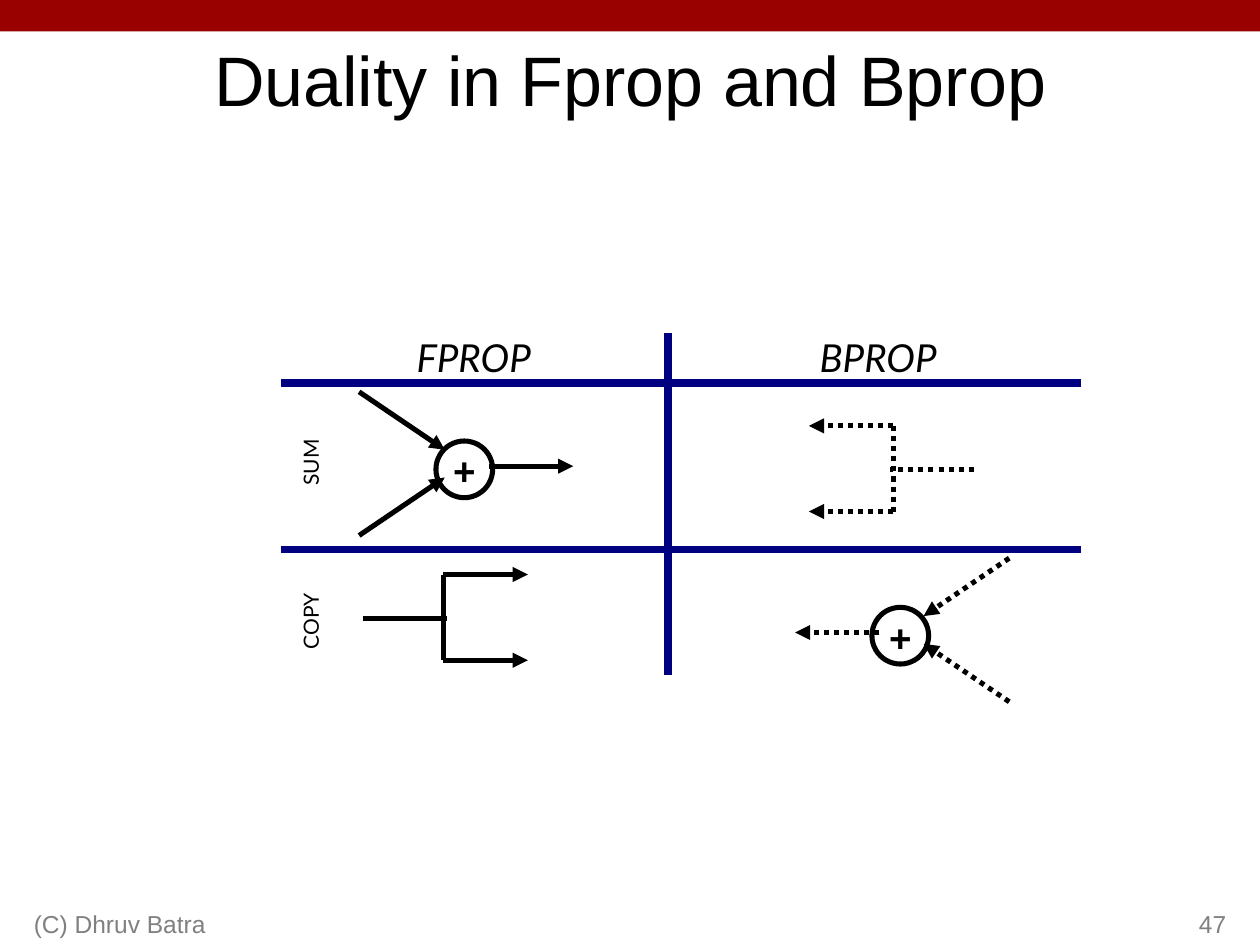
from dataclasses import dataclass

from lxml.etree import SubElement
from pptx import Presentation
from pptx.dml.color import RGBColor
from pptx.enum.dml import MSO_LINE
from pptx.enum.shapes import MSO_CONNECTOR, MSO_SHAPE
from pptx.enum.text import MSO_ANCHOR as Anchor, PP_ALIGN as Align
from pptx.oxml.ns import qn
from pptx.util import Inches, Pt


@dataclass(frozen=True)
class Theme:
    banner: RGBColor = RGBColor(0x99, 0x00, 0x00)
    ink: RGBColor = RGBColor(0x00, 0x00, 0x00)
    grid: RGBColor = RGBColor(0x00, 0x00, 0x80)
    muted: RGBColor = RGBColor(0x80, 0x80, 0x80)
    font: str = "Arial"
    label_font: str = "Lato"
    title_size: int = 40
    heading_size: int = 22
    footer_size: int = 14
    label_size: int = 12
    stroke: float = 2.89
    grid_stroke: float = 4.31


THEME = Theme()


@dataclass(frozen=True)
class Box:
    left: float
    top: float
    width: float
    height: float

    def inches(self):
        return [Inches(v) for v in (self.left, self.top, self.width, self.height)]

    def point(self, x, y, mirrored=False):
        """Slide position of a point inside the box, flipped left to right if mirrored."""
        return self.left + (self.width - x if mirrored else x), self.top + y


def write(shape, text, size, color=THEME.ink, font=THEME.font, align=Align.CENTER,
          anchor=Anchor.MIDDLE, insets=(0.1, 0.05, 0.1, 0.05), wrap=True,
          bold=False, italic=False):
    frame = shape.text_frame
    frame.word_wrap = wrap
    frame.vertical_anchor = anchor
    (frame.margin_left, frame.margin_top,
     frame.margin_right, frame.margin_bottom) = [Inches(v) for v in insets]
    para = frame.paragraphs[0]
    para.text = text
    para.alignment = align
    para.font.name = font
    para.font.size = Pt(size)
    para.font.color.rgb = color
    para.font.bold = bold
    para.font.italic = italic


def add_text(page, box, text, size, **style):
    shape = page.shapes.add_textbox(*box.inches())
    write(shape, text, size, **style)
    return shape


def add_line(page, start, end, color=THEME.ink, width=THEME.stroke,
             dotted=False, arrow=False):
    ends = [Inches(v) for v in (*start, *end)]
    line = page.shapes.add_connector(MSO_CONNECTOR.STRAIGHT, *ends)
    line.line.color.rgb = color
    line.line.width = Pt(width)
    if dotted:
        line.line.dash_style = MSO_LINE.ROUND_DOT
    if arrow:
        SubElement(line.line._get_or_add_ln(), qn("a:tailEnd"), type="triangle")
    SubElement(line._element.spPr, qn("a:effectLst"))


def add_banner(page, box):
    banner = page.shapes.add_shape(MSO_SHAPE.RECTANGLE, *box.inches())
    banner.shadow.inherit = False
    banner.fill.solid()
    banner.fill.fore_color.rgb = THEME.banner
    banner.line.fill.background()


def add_footer(page, box, credit, number):
    style = dict(color=THEME.muted, anchor=Anchor.BOTTOM)
    add_text(page, Box(box.left, box.top, 3.17, box.height), credit,
             THEME.footer_size, align=Align.LEFT, **style)
    number_left = box.left + box.width - 2.08
    add_text(page, Box(number_left, box.top, 2.08, box.height), number,
             THEME.footer_size, align=Align.RIGHT, **style)


def add_sum(page, box, backward=False):
    """Two arrows into a plus node, one arrow out."""
    size = 0.45
    left, top = box.point(0.64 + size if backward else 0.61, 0.39, backward)
    node = page.shapes.add_shape(MSO_SHAPE.OVAL, *Box(left, top, size, size).inches())
    node.shadow.inherit = False
    node.fill.background()
    node.line.color.rgb = THEME.ink
    node.line.width = Pt(THEME.stroke)
    write(node, "+", THEME.heading_size, bold=True, wrap=False,
          insets=(0.11, 0.08, 0.11, 0.06))
    arrows = [((0, 0), (0.68, 0.46)),
              ((0, box.height), (0.68, box.height - 0.46)),
              ((1.03, 0.59), (box.width, 0.59))]
    for start, end in arrows:
        add_line(page, box.point(*start, backward), box.point(*end, backward),
                 dotted=backward, arrow=True)


def add_copy(page, box, backward=False):
    """One stem that forks into two arrows."""
    fork = 0.64
    lines = [((fork, 0), (box.width, 0), True),
             ((fork, box.height), (box.width, box.height), True),
             ((fork, 0), (fork, box.height), False),
             ((0, 0.35), (fork + 0.03, 0.35), False)]
    for start, end, arrow in lines:
        add_line(page, box.point(*start, backward), box.point(*end, backward),
                 dotted=backward, arrow=arrow)


def add_grid(page, box):
    """Rules and labels of the two-by-two comparison."""
    right, bottom = box.left + box.width, box.top + box.height
    rules = [((box.left, 4.36), (right, 4.36)),
             ((box.left, 3.04), (right, 3.04)),
             ((5.3, bottom), (5.3, box.top))]
    for start, end in rules:
        add_line(page, start, end, color=THEME.grid, width=THEME.grid_stroke)

    for text, left in (("FPROP", 3.07), ("BPROP", 6.28)):
        add_text(page, Box(left, 2.58, 1.38, 0.48), text, THEME.heading_size,
                 font=THEME.label_font, italic=True, anchor=Anchor.TOP,
                 insets=(0.09, 0.07, 0.09, 0.04))

    for text, top in (("SUM", 3.5), ("COPY", 4.76)):
        label = add_text(page, Box(2.02, top, 0.91, 0.34), text, THEME.label_size,
                         font=THEME.label_font, anchor=Anchor.TOP,
                         insets=(0.09, 0.06, 0.09, 0.04))
        label.rotation = 270


def main():
    deck = Presentation()
    deck.slide_width, deck.slide_height = Inches(10), Inches(7.5)
    page = deck.slides.add_slide(deck.slide_layouts[6])

    # Frame of the slide
    add_banner(page, Box(0, 0, 10, 0.25))
    add_text(page, Box(0.75, 0.25, 8.5, 0.75), "Duality in Fprop and Bprop",
             THEME.title_size)
    add_footer(page, Box(0.17, 7, 9.66, 0.5), "(C) Dhruv Batra", "47")

    # Forward diagrams on the left, their mirrored duals on the right
    add_sum(page, Box(2.85, 3.11, 1.7, 1.14))
    add_sum(page, Box(6.31, 4.43, 1.7, 1.14), backward=True)
    add_copy(page, Box(6.42, 3.38, 1.31, 0.68), backward=True)
    add_copy(page, Box(2.88, 4.56, 1.31, 0.68))

    add_grid(page, Box(2.23, 2.64, 6.35, 2.72))
    deck.save("out.pptx")


if __name__ == "__main__":
    main()
